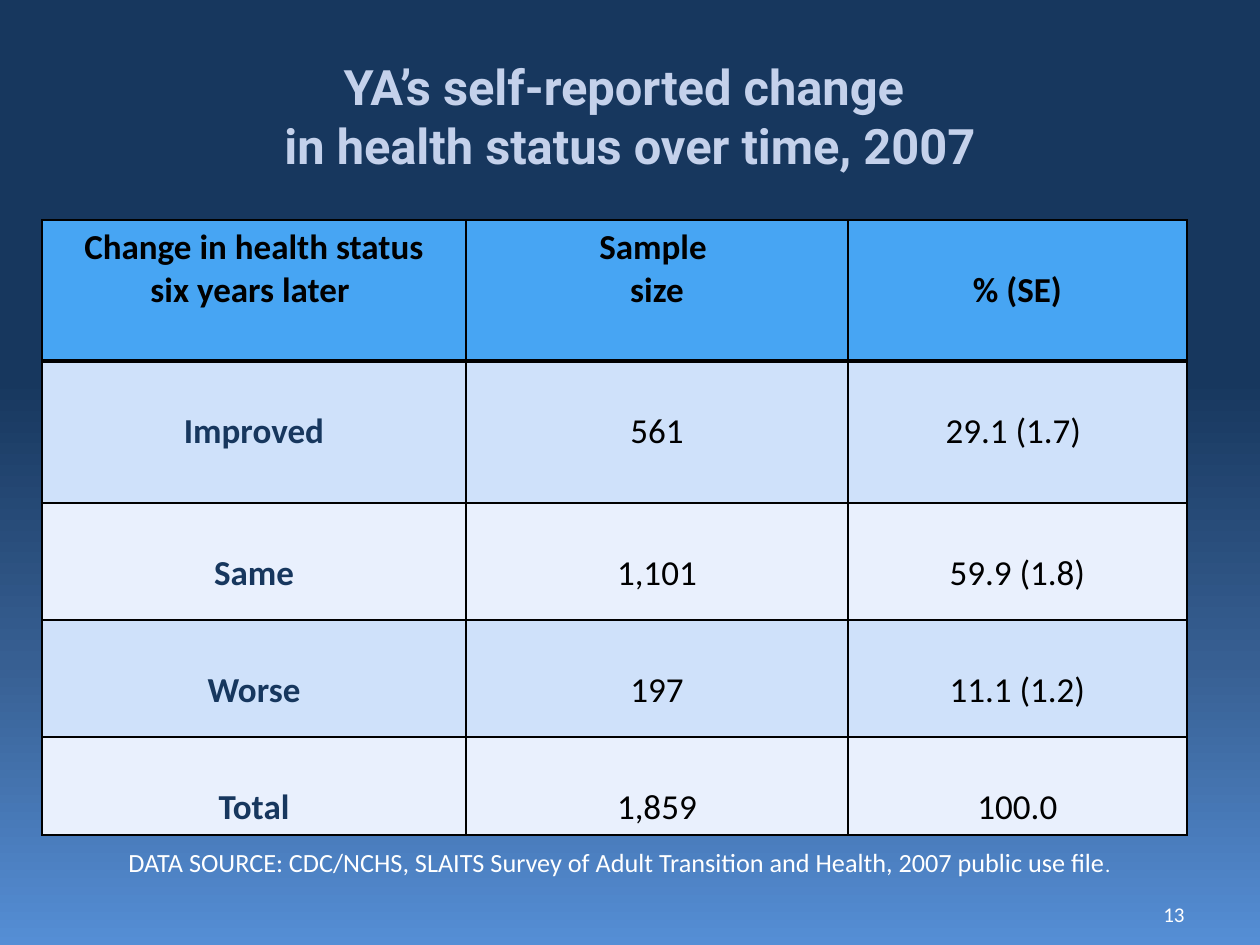
from lxml.etree import SubElement
from pptx import Presentation
from pptx.dml.color import RGBColor as RGB
from pptx.enum.text import MSO_ANCHOR as ANCHOR, PP_ALIGN as ALIGN
from pptx.oxml.ns import qn
from pptx.util import Pt

SCALE = 914400 / 126
COLORS = {
    "navy": "17375E", "steel": "375F92", "sky": "558ED5", "title": "C4D1EB",
    "header": "47A5F3", "band": "CFE1FA", "light": "E9F0FD",
    "black": "000000", "white": "FFFFFF",
}
STOPS = [(0, "navy"), (40, "navy"), (70, "steel"), (100, "sky")]
COLUMNS = [424, 382, 339]
ROW_HEIGHTS = [141, 142, 117, 117, 98]
ROWS = [
    ["Change in health status\nsix years later ", "Sample \nsize", "% (SE)"],
    ["Improved", "561", "29.1 (1.7) "],
    ["Same", "1,101", "59.9 (1.8)"],
    ["Worse", "197", "11.1 (1.2)"],
    ["Total", "1,859", "100.0"],
]


def px(n):
    return round(n * SCALE)


def add_color(parent, color):
    return SubElement(parent, qn("a:srgbClr"), val=COLORS[color])


class Deck:
    font = "Calibri"

    def __init__(self, width, height):
        self.prs = Presentation()
        self.prs.slide_width, self.prs.slide_height = px(width), px(height)
        self.s = self.prs.slides.add_slide(self.prs.slide_layouts[5])

    def background(self, stops):
        fill = self.s.background.fill
        fill.gradient()
        fill.gradient_angle = 270
        gs_list = next(self.s.element.iter(qn("a:gsLst")))
        for gs in list(gs_list):
            gs_list.remove(gs)
        for pos, color in stops:
            add_color(SubElement(gs_list, qn("a:gs"), pos=str(pos * 1000)), color)

    def style(self, tf, size, color, bold=False, align=ALIGN.LEFT, font=None):
        for p in tf.paragraphs:
            p.alignment = align
            for r in p.runs:
                r.font.name, r.font.size, r.font.bold = font or self.font, Pt(size), bold
                r.font.color.rgb = RGB.from_string(COLORS[color])

    def place(self, sp, x, y, w, h):
        sp.left, sp.top, sp.width, sp.height = px(x), px(y), px(w), px(h)

    def title(self, text, x, y, w, h, size, inset):
        sp = self.s.shapes.title
        self.place(sp, x, y, w, h)
        tf = sp.text_frame
        tf.text = text
        tf.vertical_anchor = ANCHOR.TOP
        tf.margin_top = px(inset)
        self.style(tf, size, "title", True, ALIGN.CENTER, "Roboto")

    def text(self, text, x, y, w, h, size, align=ALIGN.LEFT, anchor=ANCHOR.TOP):
        tf = self.s.shapes.add_textbox(px(x), px(y), px(w), px(h)).text_frame
        tf.word_wrap = True
        tf.vertical_anchor = anchor
        tf.text = text
        self.style(tf, size, "white", align=align)
        return tf

    def borders(self, cell, widths):
        tc_pr = cell._tc.get_or_add_tcPr()
        for side, width in zip("LRTB", widths):
            ln = SubElement(tc_pr, qn(f"a:ln{side}"), w=str(Pt(width)))
            add_color(SubElement(ln, qn("a:solidFill")), "black")

    def cell(self, cell, text, row, col):
        thick_top, thick_bottom = (3 if row == n else 1 for n in (1, 0))
        self.borders(cell, (1, 1, thick_top, thick_bottom))
        fill = "header" if row == 0 else "band" if row % 2 else "light"
        cell.fill.solid()
        cell.fill.fore_color.rgb = RGB.from_string(COLORS[fill])
        cell.text_frame.text = text
        cell.margin_top = px(6 if "\n" in text else 49)
        color = "navy" if row and col == 0 else "black"
        self.style(cell.text_frame, 20, color, row == 0 or col == 0, ALIGN.CENTER)

    def table(self, rows, x, y, widths, heights):
        frame = self.s.shapes.add_table(len(rows), len(widths), px(x), px(y),
                                        px(sum(widths)), px(sum(heights)))
        table = frame.table
        for column, width in zip(table.columns, widths):
            column.width = px(width)
        for i, (values, height) in enumerate(zip(rows, heights)):
            table.rows[i].height = px(height)
            for j, value in enumerate(values):
                self.cell(table.cell(i, j), value, i, j)


def main():
    deck = Deck(1260, 945)
    deck.background(STOPS)
    deck.title("YA’s self-reported change \vin health status over time, 2007",
               63, 0, 1134, 158, 27.9, 57)
    deck.table(ROWS, 42, 220, COLUMNS, ROW_HEIGHTS)
    deck.text("13", 903, 903, 294, 23, 12, ALIGN.RIGHT, ANCHOR.MIDDLE)
    source = deck.text("DATA SOURCE: CDC/NCHS, SLAITS Survey of Adult Transition "
                       "and Health, 2007 public use file", 116, 840, 1081, 44, 15)
    r = source.paragraphs[0].add_run()
    r.text = "."
    deck.style(source, 15, "white")
    r.font.size = Pt(12)
    deck.prs.save("out.pptx")


if __name__ == "__main__":
    main()
